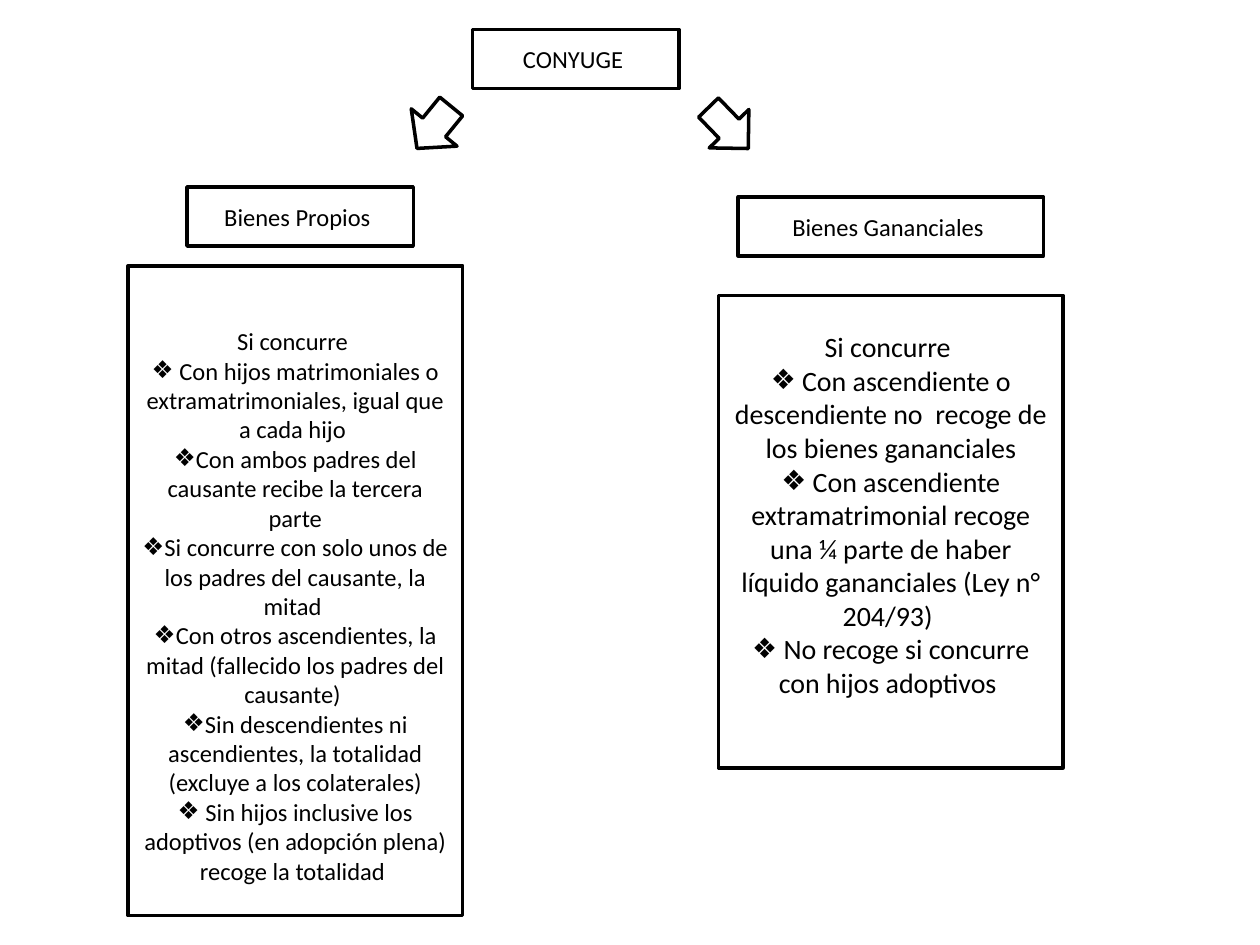
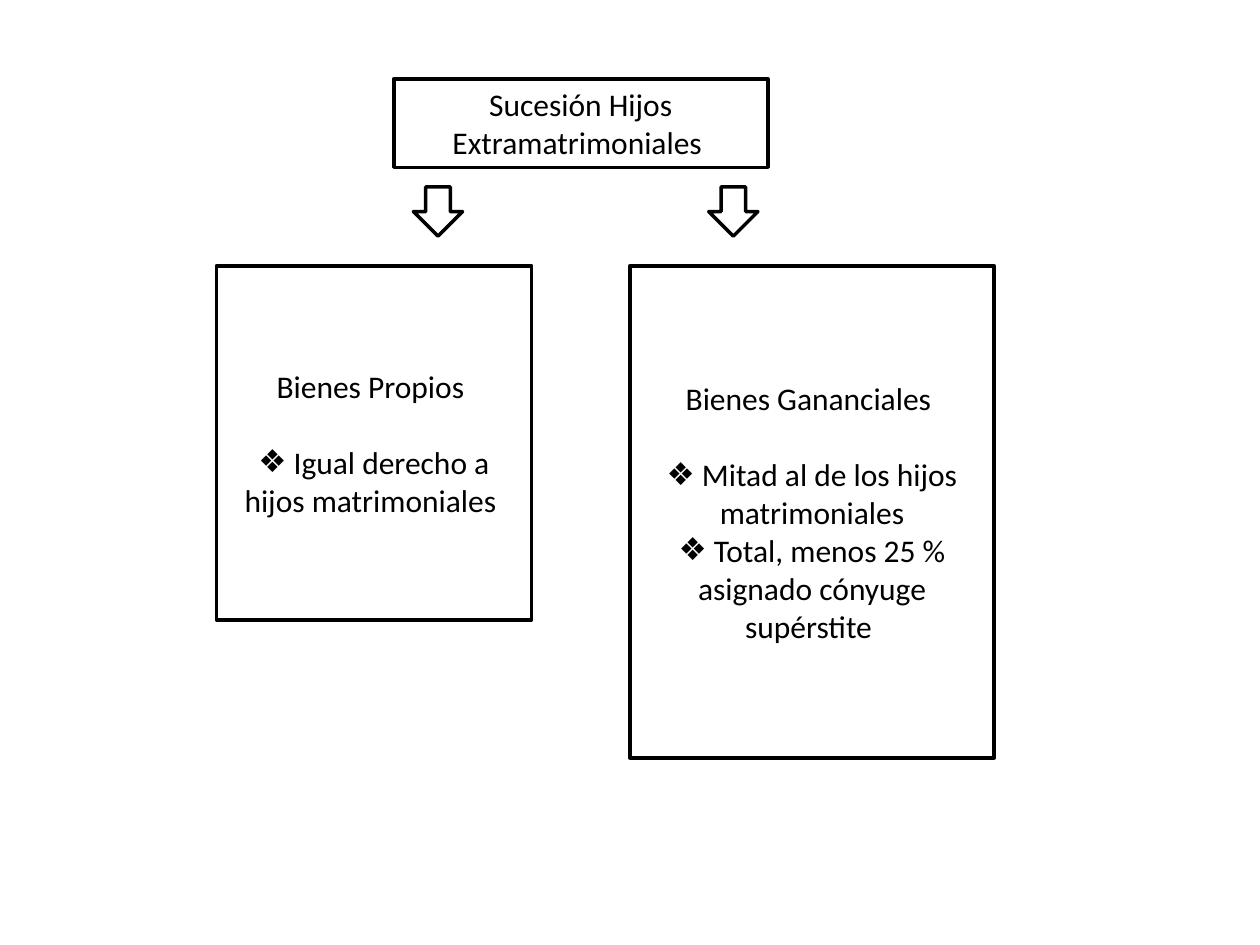
from lxml import etree
from pptx import Presentation
from pptx.dml.color import RGBColor
from pptx.enum.shapes import MSO_SHAPE
from pptx.enum.text import MSO_ANCHOR, MSO_AUTO_SIZE, PP_ALIGN
from pptx.oxml.ns import qn
from pptx.util import Inches, Pt

RECTANGLE = MSO_SHAPE.RECTANGLE
DOWN_ARROW = MSO_SHAPE.DOWN_ARROW
MIDDLE = MSO_ANCHOR.MIDDLE
CENTER = PP_ALIGN.CENTER
NO_AUTOFIT = MSO_AUTO_SIZE.NONE

COLORS = {"paper": "FFFFFF", "ink": "000000"}
FONT = "Calibri"
BULLET = "❖"
LINE_HEIGHT = 1.22
TITLE_ONLY = 5

presentation = Presentation()
presentation.slide_width = Inches(10)
presentation.slide_height = Inches(7.5)
CELL = presentation.slide_width / 128


def style_box(shape, area):
    shape.left, shape.top, shape.width, shape.height = [
        round(cells * CELL) for cells in area
    ]
    shape.fill.solid()
    shape.fill.fore_color.rgb = RGBColor.from_string(COLORS["paper"])
    shape.line.color.rgb = RGBColor.from_string(COLORS["ink"])
    shape.line.width = Pt(2)


def write_text(shape, heading, bullets, size, gap_lines=0):
    frame = shape.text_frame
    frame.word_wrap = True
    frame.auto_size = NO_AUTOFIT
    frame.vertical_anchor = MIDDLE
    for index, text in enumerate([heading] + bullets):
        paragraph = frame.paragraphs[0] if index == 0 else frame.add_paragraph()
        paragraph.alignment = CENTER
        paragraph.space_before = Pt(0)
        if index == 1:
            paragraph.space_before = Pt(round(gap_lines * size * LINE_HEIGHT))
        if index > 0:
            properties = paragraph._p.get_or_add_pPr()
            properties.set("marL", "0")
            properties.set("indent", "0")
            etree.SubElement(properties, qn("a:buFont")).set("typeface", FONT)
            etree.SubElement(properties, qn("a:buChar")).set("char", BULLET)
        run = paragraph.add_run()
        run.text = text
        run.font.name = FONT
        run.font.size = Pt(size)
        run.font.color.rgb = RGBColor.from_string(COLORS["ink"])


own_assets = [
    " Con hijos matrimoniales o extramatrimoniales, igual que a cada hijo ",
    "Con ambos padres del causante recibe la tercera parte",
    "Si concurre con solo unos de los padres del causante, la mitad ",
    "Con otros ascendientes, la mitad (fallecido los padres del causante) ",
    "Sin descendientes ni ascendientes, la totalidad (excluye a los colaterales)",
    " Sin hijos inclusive los adoptivos (en adopción plena) recoge la totalidad ",
]
shared_assets = [
    " Con ascendiente o descendiente no  recoge de los bienes gananciales",
    " Con ascendiente extramatrimonial recoge una ¼ parte de haber líquido gananciales (Ley n° 204/93) ",
    " No recoge si concurre con hijos adoptivos ",
]
child_shared_assets = [
    " Mitad al de los hijos matrimoniales",
    " Total, menos 25 % asignado cónyuge supérstite ",
]

slides = [
    {
        "title": ("CONYUGE ", (48, 3, 21, 6), 14),
        "boxes": [
            ((13, 27, 34, 66), "Si concurre ", own_assets, 14, 0, 1, 0),
            ((73, 30, 35, 48), "Si concurre ", shared_assets, 16, 0, 0, 1),
            ((19, 19, 23, 6), "Bienes Propios ", [], 14, 0, 0, 0),
            ((75, 20, 31, 6), "Bienes Gananciales ", [], 14, 0, 0, 0),
        ],
        "arrows": [((71.2, 10.1, 5.6, 5.8), 315.9), ((41.1, 10.2, 6, 5.5), 39.2)],
    },
    {
        "title": ("Sucesión Hijos Extramatrimoniales ", (40, 8, 38, 9), 18),
        "boxes": [
            ((22, 27, 32, 36), "Bienes Propios ",
             [" Igual derecho a hijos matrimoniales "], 18, 1, 0, 0),
            ((64, 27, 37, 50), "Bienes Gananciales ", child_shared_assets, 18, 1, 0, 0),
        ],
        "arrows": [((72, 19, 5, 5), 0), ((42, 19, 5, 5), 0)],
    },
]

for content in slides:
    slide = presentation.slides.add_slide(presentation.slide_layouts[TITLE_ONLY])
    title, title_area, title_size = content["title"]
    style_box(slide.shapes.title, title_area)
    write_text(slide.shapes.title, title, [], title_size)

    for area, heading, bullets, size, gap, lines_above, lines_below in content["boxes"]:
        box = slide.shapes.add_shape(RECTANGLE, 0, 0, 0, 0)
        box.shadow.inherit = False
        style_box(box, area)
        write_text(box, heading, bullets, size, gap)
        box.text_frame.margin_top = Inches(0.05) + Pt(lines_above * size * LINE_HEIGHT)
        box.text_frame.margin_bottom = Inches(0.05) + Pt(lines_below * size * LINE_HEIGHT)

    for area, rotation in content["arrows"]:
        arrow = slide.shapes.add_shape(DOWN_ARROW, 0, 0, 0, 0)
        arrow.shadow.inherit = False
        style_box(arrow, area)
        arrow.rotation = rotation

presentation.save("out.pptx")
